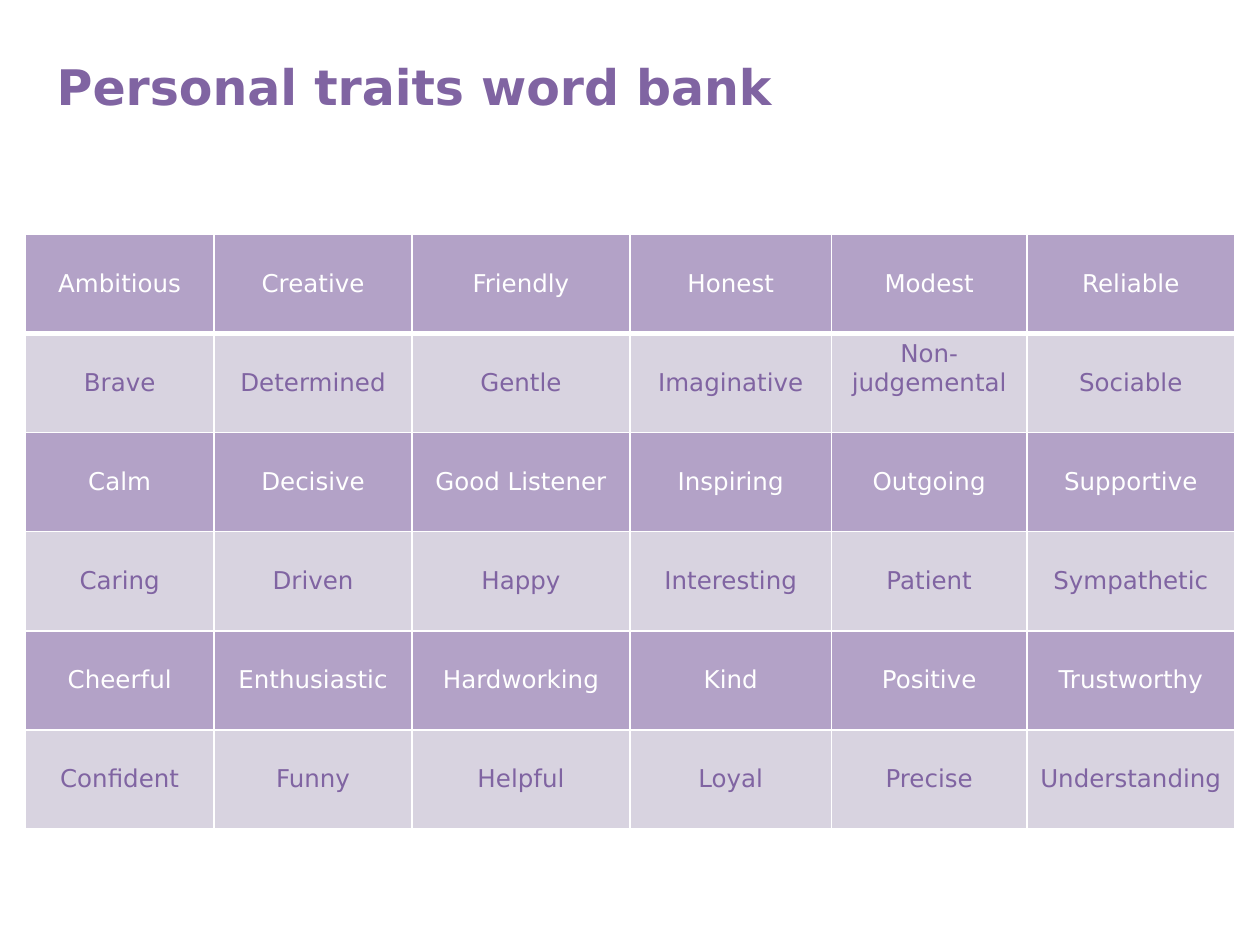
"""Build the personal traits word bank slide."""
import dataclasses

import lxml.etree
import pptx
import pptx.dml.color
import pptx.enum.text
import pptx.oxml.ns
import pptx.util

Inches = pptx.util.Inches
ANCHOR = pptx.enum.text.MSO_ANCHOR
ALIGN = pptx.enum.text.PP_ALIGN


@dataclasses.dataclass(frozen=True)
class Theme:
    """Colours, font and type sizes of the slide."""
    font: str = "DejaVu Sans"
    purple: str = "8064A2"
    lilac: str = "B3A2C7"
    pale: str = "D8D3E0"
    white: str = "FFFFFF"
    title_size: int = 28
    trait_size: int = 14
    rule: int = 1
    header_rule: int = 3


THEME = Theme()
TRAITS = [
    ["Ambitious", "Creative", "Friendly", "Honest", "Modest", "Reliable"],
    ["Brave", "Determined", "Gentle", "Imaginative", "Non-judgemental", "Sociable"],
    ["Calm", "Decisive", "Good Listener", "Inspiring", "Outgoing", "Supportive"],
    ["Caring", "Driven", "Happy", "Interesting", "Patient", "Sympathetic"],
    ["Cheerful", "Enthusiastic", "Hardworking", "Kind", "Positive", "Trustworthy"],
    ["Confident", "Funny", "Helpful", "Loyal", "Precise", "Understanding"],
]
COLUMN_WIDTHS = [1.5, 1.57, 1.73, 1.6, 1.55, 1.65]


def write_text(frame, text, *, size, color, bold=False, align=ALIGN.LEFT):
    """Put one formatted paragraph into a text frame."""
    paragraph = frame.paragraphs[0]
    paragraph.alignment = align
    run = paragraph.add_run()
    run.text = text
    run.font.name = THEME.font
    run.font.size = pptx.util.Pt(size)
    run.font.bold = bold
    run.font.color.rgb = pptx.dml.color.RGBColor.from_string(color)


def set_borders(cell, top, bottom):
    """Draw white rules around a cell, with top and bottom widths in points."""
    qn = pptx.oxml.ns.qn
    properties = cell._tc.get_or_add_tcPr()
    widths = {"L": THEME.rule, "R": THEME.rule, "T": top, "B": bottom}
    for position, (side, width) in enumerate(widths.items()):
        line = lxml.etree.Element(qn(f"a:ln{side}"), w=str(pptx.util.Pt(width)))
        fill = lxml.etree.SubElement(line, qn("a:solidFill"))
        lxml.etree.SubElement(fill, qn("a:srgbClr"), val=THEME.white)
        properties.insert(position, line)


def add_title(slide, text):
    """Place and format the slide title."""
    title = slide.shapes.title
    title.left, title.top = Inches(0.35), Inches(0.06)
    title.width, title.height = Inches(9.21), Inches(1.25)
    title.text_frame.vertical_anchor = ANCHOR.MIDDLE
    write_text(title.text_frame, text, size=THEME.title_size,
               color=THEME.purple, bold=True)


def fill_cell(cell, trait, row):
    """Style one trait cell according to its row."""
    dark = row % 2 == 0
    cell.fill.solid()
    cell.fill.fore_color.rgb = pptx.dml.color.RGBColor.from_string(
        THEME.lilac if dark else THEME.pale)
    set_borders(cell,
                top=THEME.header_rule if row == 1 else THEME.rule,
                bottom=THEME.header_rule if row == 0 else THEME.rule)
    wraps = trait == "Non-judgemental"
    cell.vertical_anchor = ANCHOR.TOP if wraps else ANCHOR.MIDDLE
    write_text(cell.text_frame, trait, size=THEME.trait_size,
               color=THEME.white if dark else THEME.purple, align=ALIGN.CENTER)


def add_word_bank(slide):
    """Add the table of traits."""
    word_bank = slide.shapes.add_table(
        len(TRAITS), len(COLUMN_WIDTHS), Inches(0.2), Inches(1.86),
        Inches(sum(COLUMN_WIDTHS)), Inches(4.72)).table
    for column, width in zip(word_bank.columns, COLUMN_WIDTHS):
        column.width = Inches(width)
    for row, traits in enumerate(TRAITS):
        for column, trait in enumerate(traits):
            fill_cell(word_bank.cell(row, column), trait, row)


def main():
    """Build and save the presentation."""
    presentation = pptx.Presentation()
    presentation.slide_width = Inches(10)
    presentation.slide_height = Inches(7.5)
    slide = presentation.slides.add_slide(
        presentation.slide_layouts.get_by_name("Title Only"))
    add_title(slide, "Personal traits word bank")
    add_word_bank(slide)
    presentation.save("out.pptx")


if __name__ == "__main__":
    main()
